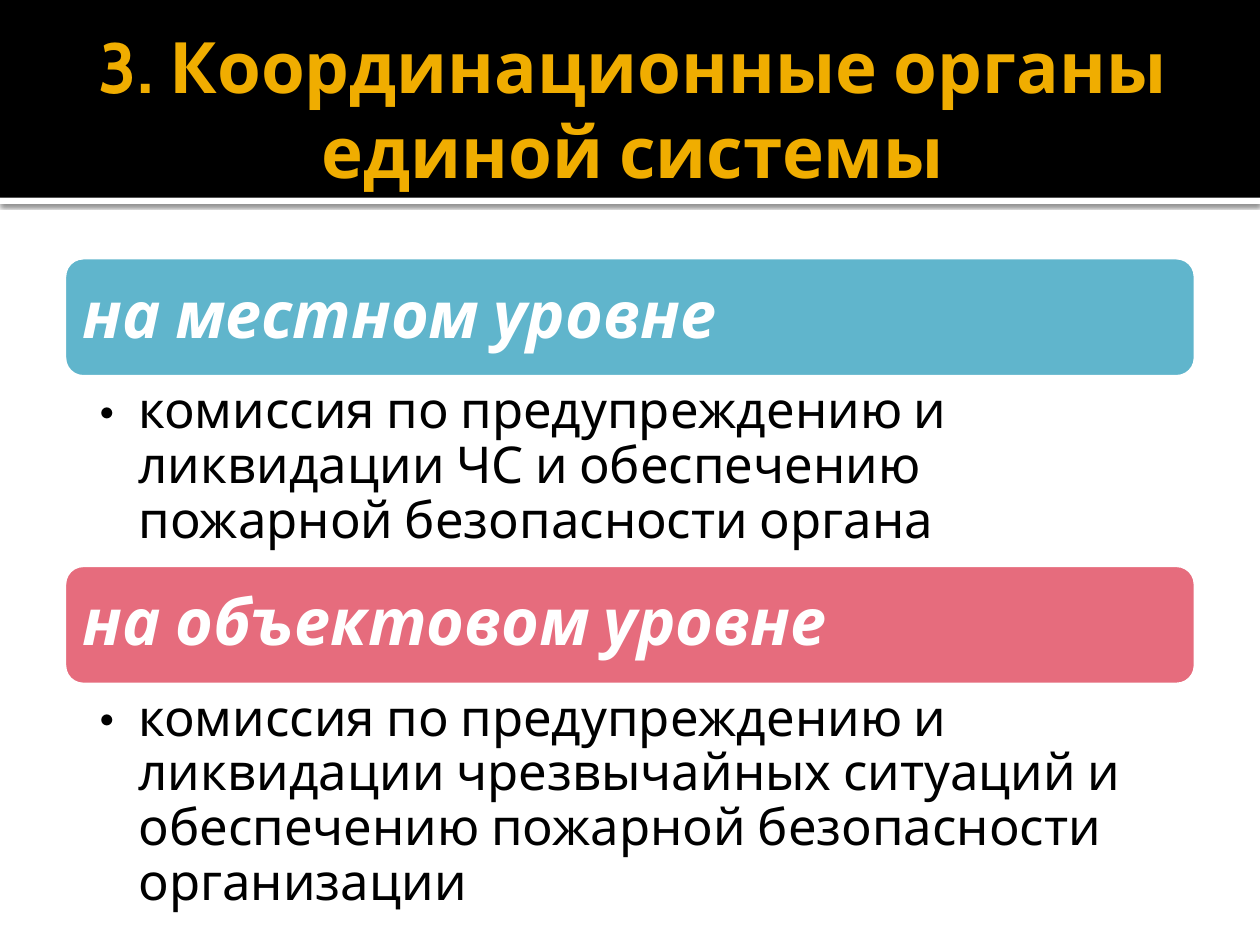
"""Build a slide on the coordinating bodies at local and site level."""
from lxml.etree import SubElement
from pptx import Presentation
from pptx.dml.color import RGBColor
from pptx.enum.shapes import MSO_SHAPE
from pptx.enum.text import MSO_ANCHOR, PP_ALIGN
from pptx.oxml.ns import qn
from pptx.util import Pt

BLACK = RGBColor(0x00, 0x00, 0x00)
WHITE = RGBColor(0xFF, 0xFF, 0xFF)
GOLD = RGBColor(0xF0, 0xAD, 0x00)
BLUE = RGBColor(0x60, 0xB5, 0xCC)
PINK = RGBColor(0xE6, 0x6C, 0x7D)

LEFT, WIDE = 36, 648
TOP, BAR = 146.4, 69.8

LEVELS = [
    ("на местном уровне", BLUE, 106,
     "комиссия по предупреждению и ликвидации ЧС и обеспечению пожарной "
     "безопасности органа"),
    ("на объектовом уровне", PINK, 136,
     "комиссия по предупреждению и ликвидации чрезвычайных ситуаций и "
     "обеспечению пожарной безопасности организации"),
]


def add_block(kind, x, y, w, h, fill):
    shape = slide.shapes.add_shape(kind, Pt(x), Pt(y), Pt(w), Pt(h))
    shape.shadow.inherit = False
    shape.fill.solid()
    shape.fill.fore_color.rgb = fill
    shape.line.fill.background()
    return shape


def set_text(shape, text, size, color, insets, anchor, bold=False):
    frame = shape.text_frame
    frame.word_wrap = True
    frame.vertical_anchor = anchor
    frame.margin_left, frame.margin_top, frame.margin_right, frame.margin_bottom = map(Pt, insets)
    frame.text = text
    para = frame.paragraphs[0]
    para.alignment = PP_ALIGN.LEFT
    font = para.runs[0].font
    font.name, font.size, font.bold = "Cabin", Pt(size), bold
    font.color.rgb = color
    return para


prs = Presentation()
prs.slide_width, prs.slide_height = Pt(720), Pt(540)
slide = prs.slides.add_slide(prs.slide_layouts[6])
slide.background.fill.solid()
slide.background.fill.fore_color.rgb = WHITE

strip = add_block(MSO_SHAPE.RECTANGLE, 0, 113, 720, 3.6, WHITE)
effects = strip._element.spPr.find(qn("a:effectLst"))
shade = SubElement(effects, qn("a:outerShdw"), blurRad=str(Pt(2.5)), dist=str(Pt(0.8)),
                   dir="5400000", algn="t", rotWithShape="0")
tone = SubElement(shade, qn("a:srgbClr"), val=str(BLACK))
SubElement(tone, qn("a:alpha"), val="60000")
add_block(MSO_SHAPE.RECTANGLE, 0, 0, 720, 113, BLACK)

title = slide.shapes.add_textbox(Pt(LEFT), Pt(12.2), Pt(WIDE), Pt(98.6))
para = set_text(title, "3. Координационные органы единой системы", 40.5, GOLD,
                (7.2, 3.6, 3.6, 3.6), MSO_ANCHOR.MIDDLE, True)
para.alignment = PP_ALIGN.CENTER

y = TOP
for head, fill, tall, text in LEVELS:
    bar = add_block(MSO_SHAPE.ROUNDED_RECTANGLE, LEFT, y, WIDE, BAR, fill)
    bar.line.color.rgb = WHITE
    bar.line.width = Pt(3.78)
    para = set_text(bar, head, 37, WHITE, (7.8,) * 4, MSO_ANCHOR.MIDDLE, True)
    para.line_spacing = 0.9
    para.runs[0].font.italic = True

    box = slide.shapes.add_textbox(Pt(LEFT), Pt(y + BAR), Pt(WIDE), Pt(tall))
    para = set_text(box, text, 29, BLACK, (20.6, 3.6, 20.6, 3.6), MSO_ANCHOR.TOP)
    para.line_spacing = 0.9
    props = para._p.get_or_add_pPr()
    props.set("marL", str(Pt(22.5)))
    props.set("indent", str(Pt(-22.5)))
    SubElement(props, qn("a:buFont"), typeface="Cabin")
    SubElement(props, qn("a:buChar"), char="•")
    y += BAR + tall

prs.save("out.pptx")
